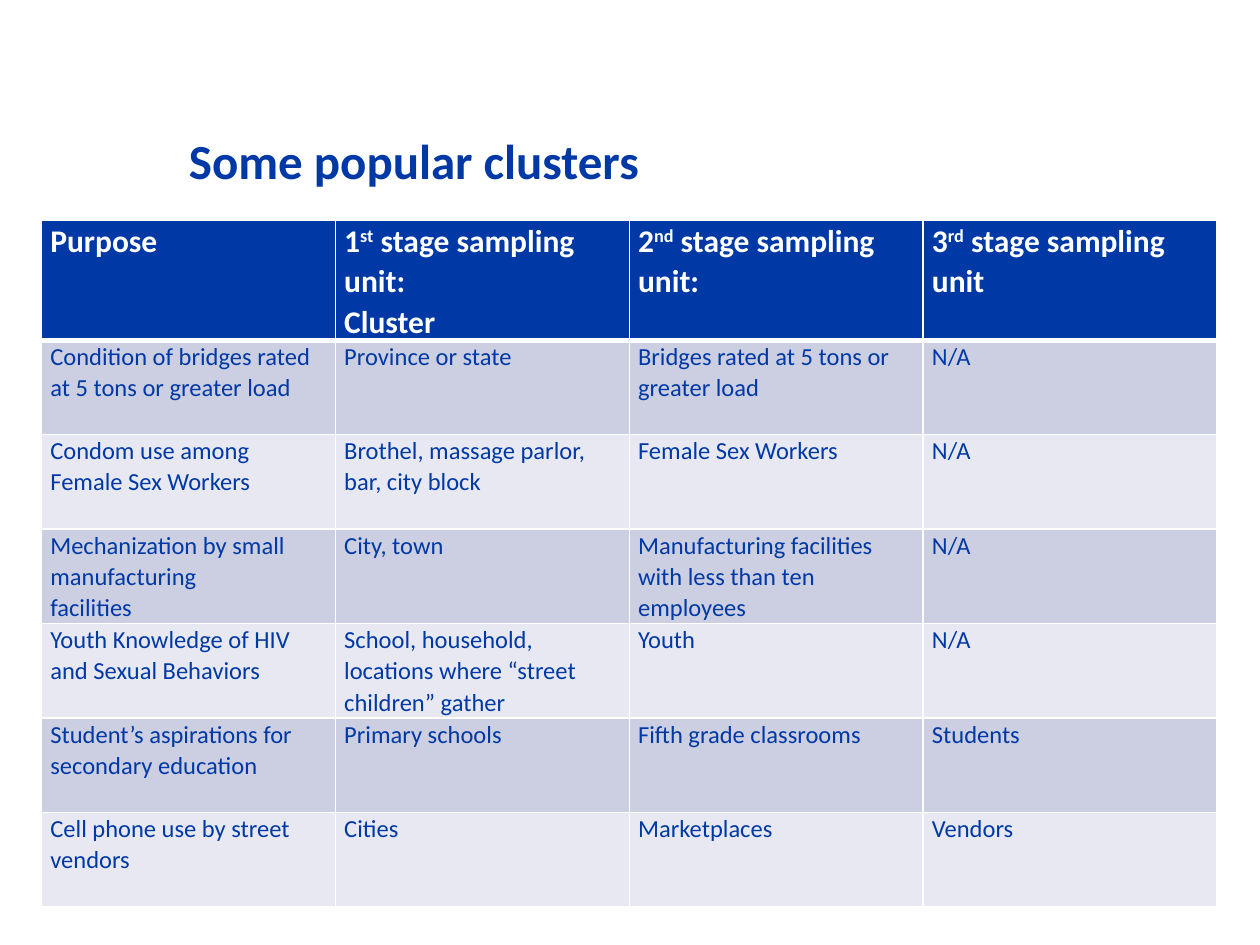
import pptx
import pptx.dml.color
import pptx.enum.text
import pptx.oxml
import pptx.oxml.ns
import pptx.util
from pptx.util import Inches

COLORS = {"blue": "0039A6", "white": "FFFFFF", "band": "CCCEE1", "light": "E7E8F1"}
FONT = "Calibri"

# Text between ^ marks is superscript; a line break starts a new paragraph.
ROWS = [
    ["Purpose", "1^st^ stage sampling unit:\nCluster",
     "2^nd^ stage sampling unit:", "3^rd^ stage sampling unit"],
    ["Condition of bridges rated at 5 tons or greater load", "Province or state",
     "Bridges rated at 5 tons or greater load", "N/A"],
    ["Condom use among Female Sex Workers", "Brothel, massage parlor, bar, city block",
     "Female Sex Workers", "N/A"],
    ["Mechanization by small manufacturing\nfacilities", "City, town",
     "Manufacturing facilities with less than ten employees", "N/A"],
    ["Youth Knowledge of HIV and Sexual Behaviors",
     "School, household, locations where “street children” gather", "Youth", "N/A"],
    ["Student’s aspirations for secondary education", "Primary schools",
     "Fifth grade classrooms", "Students"],
    ["Cell phone use by street vendors", "Cities", "Marketplaces", "Vendors"],
]


def write_text(frame, text, size, color, bold=False, spacing=1.05):
    """Fill a text frame, raising the parts between ^ marks."""
    frame.word_wrap = True
    for number, line in enumerate(text.split("\n")):
        para = frame.add_paragraph() if number else frame.paragraphs[0]
        para.line_spacing = spacing
        for index, part in enumerate(line.split("^")):
            span = para.add_run()
            span.text = part
            span.font.name = FONT
            span.font.size = pptx.util.Pt(size)
            span.font.bold = bold
            span.font.color.rgb = pptx.dml.color.RGBColor.from_string(COLORS[color])
            if index % 2:
                span._r.get_or_add_rPr().set("baseline", "30000")


def add_border(cell, side, points):
    cell._tc.get_or_add_tcPr().append(pptx.oxml.parse_xml(
        f'<a:ln{side} {pptx.oxml.ns.nsdecls("a")} w="{pptx.util.Pt(points)}">'
        f'<a:solidFill><a:srgbClr val="{COLORS["white"]}"/></a:solidFill></a:ln{side}>'))


deck = pptx.Presentation()
deck.slide_width, deck.slide_height = Inches(10), Inches(7.5)
page = deck.slides.add_slide(deck.slide_layouts[6])

title = page.shapes.add_textbox(Inches(0.5), Inches(0.3), Inches(9), Inches(1.25))
title.text_frame.vertical_anchor = pptx.enum.text.MSO_ANCHOR.BOTTOM
title.text_frame.margin_left = Inches(1)
write_text(title.text_frame, "Some popular clusters", size=28, color="blue",
           bold=True, spacing=pptx.util.Pt(30))

table = page.shapes.add_table(len(ROWS), len(ROWS[0]), Inches(0.33), Inches(1.75),
                              Inches(9.33), Inches(5.45)).table
for row_index, texts in enumerate(ROWS):
    header = row_index == 0
    table.rows[row_index].height = Inches(0.95 if header else 0.75)
    fill = "blue" if header else "band" if row_index % 2 else "light"
    for column_index, text in enumerate(texts):
        cell = table.cell(row_index, column_index)
        cell.margin_left = cell.margin_right = Inches(0.07)
        cell.margin_top = cell.margin_bottom = 0
        for side in "LRTB":
            under_header = (row_index, side) in ((0, "B"), (1, "T"))
            add_border(cell, side, 3 if under_header else 1)
        cell.fill.solid()
        cell.fill.fore_color.rgb = pptx.dml.color.RGBColor.from_string(COLORS[fill])
        write_text(cell.text_frame, text, size=18 if header else 14,
                   color="white" if header else "blue", bold=header)

deck.save("out.pptx")
